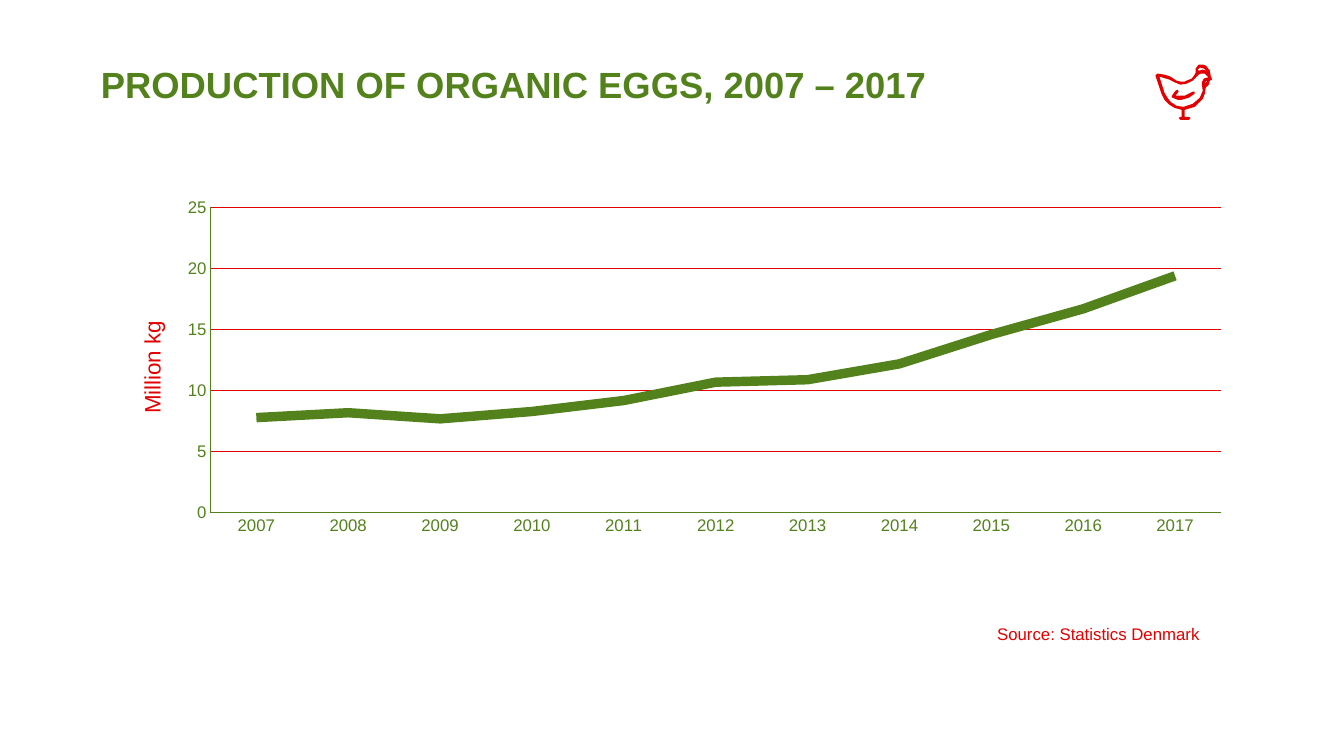
from dataclasses import dataclass

import pptx
import pptx.chart.data
import pptx.dml.color
import pptx.enum.chart
import pptx.enum.text
import pptx.oxml
import pptx.util
from pptx.util import Inches


@dataclass(frozen=True)
class Theme:
    font: str = "Arial"
    green: str = "53821D"
    red: str = "E30000"
    title_size: float = 26
    axis_title_size: float = 16
    body_size: float = 12
    thin: float = 0.75
    thick: float = 6.75


YEARS = [str(year) for year in range(2007, 2018)]
EGGS = [7.8, 8.2, 7.7, 8.3, 9.2, 10.7, 10.9, 12.2, 14.6, 16.7, 19.4]

# Hen contours, in hundredths of an inch from the icon's top left corner
HEN_OUTLINE = [
    (56, 14), (55, 12), (54, 6), (50, 1), (47, 0), (43, 0), (40, 4), (40, 8),
    (39, 10), (36, 14), (31, 16), (29, 17), (25, 17), (21, 16), (15, 12),
    (9, 10), (2, 9), (0, 11), (6, 29), (9, 35), (14, 40), (19, 43), (26, 45),
    (26, 52), (25, 52), (23, 53), (25, 55), (33, 55), (35, 53), (33, 52),
    (29, 52), (29, 45), (39, 42), (47, 34), (49, 29), (50, 23), (53, 20),
    (54, 16), (56, 15)]
HEN_CREST = [(42, 5), (44, 3), (48, 4), (52, 7), (50, 6), (47, 5), (44, 6), (43, 6)]
HEN_BODY = [
    (46, 19), (47, 26), (44, 33), (37, 39), (28, 42), (21, 41), (15, 37),
    (12, 33), (9, 28), (4, 12), (14, 15), (20, 18), (25, 20), (31, 19),
    (37, 16), (42, 11), (43, 10), (45, 9), (49, 9), (52, 12), (52, 13),
    (51, 13), (48, 14), (46, 18)]
HEN_WATTLE = [(49, 19), (49, 18), (51, 16), (51, 17)]
HEN_WING = [
    (37, 27), (29, 31), (20, 31), (23, 27), (22, 25), (20, 26), (17, 30),
    (16, 32), (17, 33), (22, 35), (26, 35), (33, 33), (39, 29), (39, 27)]


def rgb(value):
    return pptx.dml.color.RGBColor.from_string(value)


def format_font(font, name, size, color, bold=False):
    font.name = name
    font.size = pptx.util.Pt(size)
    font.bold = bold
    font.color.rgb = rgb(color)


def write_text(tf, text, *, font, size, color, bold=False, spacing=None):
    p = tf.paragraphs[0]
    p.alignment = pptx.enum.text.PP_ALIGN.LEFT
    p.line_spacing = spacing
    r = p.add_run()
    r.text = text
    format_font(r.font, font, size, color, bold)


def manual_layout(x, y, w=None, h=None):
    """Layout element with fractions of the chart area."""
    target = '<c:layoutTarget val="inner"/>' if w else ""
    size = f'<c:w val="{w}"/><c:h val="{h}"/>' if w else ""
    return pptx.oxml.parse_xml(
        '<c:layout xmlns:c="http://schemas.openxmlformats.org/drawingml/2006/chart">'
        f'<c:manualLayout>{target}<c:xMode val="edge"/><c:yMode val="edge"/>'
        f'<c:x val="{x}"/><c:y val="{y}"/>{size}</c:manualLayout></c:layout>')


def set_layout(element, layout, after=None):
    for old in element.xpath("c:layout"):
        element.remove(old)
    if after is None:
        element.insert(0, layout)
    else:
        after.addnext(layout)


class SlideBuilder:
    def __init__(self, prs, theme):
        self.theme = theme
        self.s = prs.slides.add_slide(prs.slide_layouts[5])

    def place(self, sp, x, y, w, h):
        sp.left, sp.top, sp.width, sp.height = map(Inches, (x, y, w, h))

    def title(self, text, *box):
        t, sp = self.theme, self.s.shapes.title
        self.place(sp, *box)
        tf = sp.text_frame
        tf.word_wrap = True
        tf.vertical_anchor = pptx.enum.text.MSO_ANCHOR.TOP
        write_text(tf, text, font=t.font, size=t.title_size, color=t.green,
                   bold=True, spacing=0.9)

    def note(self, text, *box):
        t = self.theme
        tf = self.s.shapes.add_textbox(*map(Inches, box)).text_frame
        tf.margin_left = tf.margin_right = tf.margin_top = tf.margin_bottom = 0
        tf.word_wrap = True
        tf.auto_size = pptx.enum.text.MSO_AUTO_SIZE.SHAPE_TO_FIT_TEXT
        write_text(tf, text, font=t.font, size=t.body_size, color=t.red)

    def line_style(self, line, color, width):
        line.color.rgb = rgb(color)
        line.width = pptx.util.Pt(width)

    def line_chart(self, categories, values, unit, *box):
        t = self.theme
        data = pptx.chart.data.CategoryChartData()
        data.categories = categories
        data.add_series("Series 1", values)
        chart = self.s.shapes.add_chart(
            pptx.enum.chart.XL_CHART_TYPE.LINE, *map(Inches, box), data).chart
        chart.has_legend = False
        chart.has_title = False
        chart.font.name = t.font
        chart.plots[0].vary_by_categories = False
        set_layout(chart._chartSpace.chart.plotArea,
                   manual_layout(0.093, 0.055, 0.899, 0.624))

        # Axes
        for axis in (chart.category_axis, chart.value_axis):
            axis.major_tick_mark = pptx.enum.chart.XL_TICK_MARK.NONE
            axis.minor_tick_mark = pptx.enum.chart.XL_TICK_MARK.NONE
            format_font(axis.tick_labels.font, t.font, t.body_size, t.green)
            self.line_style(axis.format.line, t.green, t.thin)
        axis = chart.value_axis
        axis.minimum_scale, axis.maximum_scale, axis.major_unit = 0, 25, 5
        axis.has_major_gridlines = True
        self.line_style(axis.major_gridlines.format.line, t.red, t.thin)

        # Unit beside the value axis
        tf = axis.axis_title.text_frame
        write_text(tf, unit, font=t.font, size=t.axis_title_size, color=t.red)
        body = tf._txBody.bodyPr
        body.set("rot", "-5400000")
        body.set("vert", "horz")
        title = axis.axis_title._element
        set_layout(title, manual_layout(0.025, 0.28), after=title.xpath("c:tx")[0])

        # Series
        series = chart.plots[0].series[0]
        series.smooth = False
        series.marker.style = pptx.enum.chart.XL_MARKER_STYLE.NONE
        self.line_style(series.format.line, t.green, t.thick)

    def icon(self, x, y, *shapes):
        """Each shape is a list of contours: an outline, then its holes."""
        group = self.s.shapes.add_group_shape()
        for outline, *holes in shapes:
            builder = group.shapes.build_freeform(*outline[0], scale=Inches(0.01))
            builder.add_line_segments(outline[1:], close=True)
            for hole in holes:
                builder.move_to(*hole[0])
                builder.add_line_segments(hole[1:], close=True)
            sp = builder.convert_to_shape(Inches(x), Inches(y))
            sp.shadow.inherit = False
            sp.fill.solid()
            sp.fill.fore_color.rgb = rgb(self.theme.red)
            sp.line.fill.background()


def main():
    prs = pptx.Presentation()
    prs.slide_width, prs.slide_height = Inches(13.33), Inches(7.5)
    slide = SlideBuilder(prs, Theme())
    slide.title("PRODUCTION OF ORGANIC EGGS, 2007 – 2017", 0.9, 0.62, 11.47, 1.17)
    slide.line_chart(YEARS, EGGS, "Million kg", 1.05, 1.79, 11.15, 4.86)
    slide.note("Source: Statistics Denmark", 9.89, 6.19, 2.47, 0.2)
    slide.icon(11.46, 0.64,
               [HEN_OUTLINE, HEN_CREST, HEN_BODY, HEN_WATTLE], [HEN_WING])
    prs.save("out.pptx")


if __name__ == "__main__":
    main()
